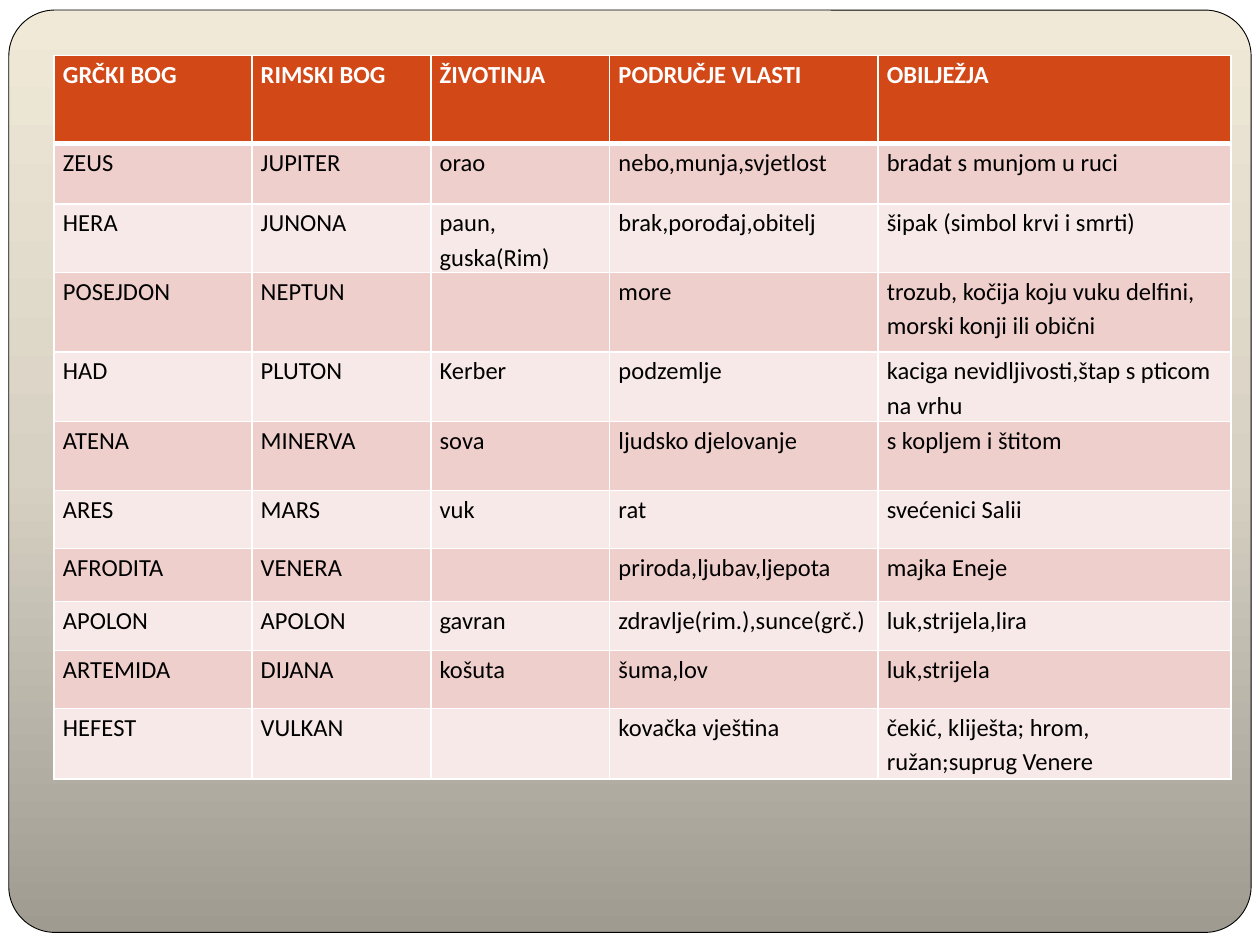
import copy

import lxml.etree
import pptx
import pptx.dml.color
import pptx.enum.shapes
import pptx.oxml.ns
import pptx.util

Inches = pptx.util.Inches
Pt = pptx.util.Pt
qn = pptx.oxml.ns.qn

COLORS = {
    "white": "FFFFFF", "black": "000000", "header": "D34817",
    "odd": "EFCFCC", "even": "F7E9E8",
    "stone": "9F9B91", "sand": "D7D1C4", "cream": "F0E9D8",
}


def rgb(name):
    return pptx.dml.color.RGBColor.from_string(COLORS[name])


def paint_gradient(fill, element):
    fill.gradient()
    fill.gradient_angle = 90
    stop_list = element.find(".//" + qn("a:gsLst"))
    stop_list.insert(1, copy.deepcopy(stop_list[0]))
    for stop, name, position in zip(fill.gradient_stops, ["stone", "sand", "cream"], [0, 0.5, 1]):
        stop.color.rgb = rgb(name)
        stop.position = position


deck = pptx.Presentation()
deck.slide_width, deck.slide_height = Inches(10), Inches(7.5)
page = deck.slides.add_slide(deck.slide_layouts[6])
paint_gradient(page.background.fill, page._element)

shapes = pptx.enum.shapes.MSO_SHAPE
backdrop = page.shapes.add_shape(shapes.RECTANGLE, 0, 0, Inches(10), Inches(7.5))
backdrop.shadow.inherit = False
backdrop.fill.solid()
backdrop.fill.fore_color.rgb = rgb("white")
backdrop.line.fill.background()

panel = page.shapes.add_shape(
    shapes.ROUNDED_RECTANGLE, Inches(0.07), Inches(0.08), Inches(9.86), Inches(7.32))
panel.shadow.inherit = False
panel.adjustments[0] = 0.05
paint_gradient(panel.fill, panel._element)
panel.line.color.rgb = rgb("black")
panel.line.width = Pt(0.5)

gods = [
    ["GRČKI BOG", "RIMSKI BOG", "ŽIVOTINJA", "PODRUČJE VLASTI", "OBILJEŽJA"],
    ["ZEUS", "JUPITER", "orao", "nebo,munja,svjetlost", "bradat s munjom u ruci"],
    ["HERA", "JUNONA", "paun, guska(Rim)", "brak,porođaj,obitelj", "šipak (simbol krvi i smrti)"],
    ["POSEJDON", "NEPTUN", "", "more", "trozub, kočija koju vuku delfini, morski konji ili obični"],
    ["HAD", "PLUTON", "Kerber", "podzemlje", "kaciga nevidljivosti,štap s pticom na vrhu"],
    ["ATENA", "MINERVA", "sova", "ljudsko djelovanje", "s kopljem i štitom"],
    ["ARES", "MARS", "vuk", "rat", "svećenici Salii"],
    ["AFRODITA", "VENERA", "", "priroda,ljubav,ljepota", "majka Eneje"],
    ["APOLON", "APOLON", "gavran", "zdravlje(rim.),sunce(grč.)", "luk,strijela,lira"],
    ["ARTEMIDA", "DIJANA", "košuta", "šuma,lov", "luk,strijela"],
    ["HEFEST", "VULKAN", "", "kovačka vještina", "čekić, kliješta; hrom, ružan;suprug Venere"],
]
column_widths = [1.57, 1.42, 1.42, 2.13, 2.8]
row_heights = [0.7, 0.48, 0.47, 0.63, 0.55, 0.55, 0.46, 0.42, 0.39, 0.46, 0.56]
cell_format = {
    "margin_left": Inches(0.07), "margin_right": Inches(0.07),
    "margin_top": 0, "margin_bottom": 0,
}
font_format = {"name": "Calibri", "size": Pt(14)}

table = page.shapes.add_table(
    len(gods), len(column_widths), Inches(0.43), Inches(0.44), Inches(9.33), Inches(5.75)).table
for column, width in zip(table.columns, column_widths):
    column.width = Inches(width)

for row_index, (texts, height) in enumerate(zip(gods, row_heights)):
    table.rows[row_index].height = Inches(height)
    is_header = row_index == 0
    fill_name = "header" if is_header else "odd" if row_index % 2 else "even"
    border_widths = {
        "a:lnL": 1, "a:lnR": 1,
        "a:lnT": 3 if row_index == 1 else 1,
        "a:lnB": 3 if is_header else 1,
    }
    for column_index, text in enumerate(texts):
        cell = table.cell(row_index, column_index)
        for key, value in cell_format.items():
            setattr(cell, key, value)
        cell.fill.solid()
        cell.fill.fore_color.rgb = rgb(fill_name)
        properties = cell._tc.get_or_add_tcPr()
        for place, (tag, width) in enumerate(border_widths.items()):
            border = lxml.etree.Element(qn(tag), w=str(Pt(width)))
            solid = lxml.etree.SubElement(border, qn("a:solidFill"))
            lxml.etree.SubElement(solid, qn("a:srgbClr"), val=COLORS["white"])
            properties.insert(place, border)
        para = cell.text_frame.paragraphs[0]
        para.line_spacing = 1.15
        if text:
            span = para.add_run()
            span.text = text
            for key, value in font_format.items():
                setattr(span.font, key, value)
            span.font.bold = is_header
            span.font.color.rgb = rgb("white" if is_header else "black")

deck.save("out.pptx")
